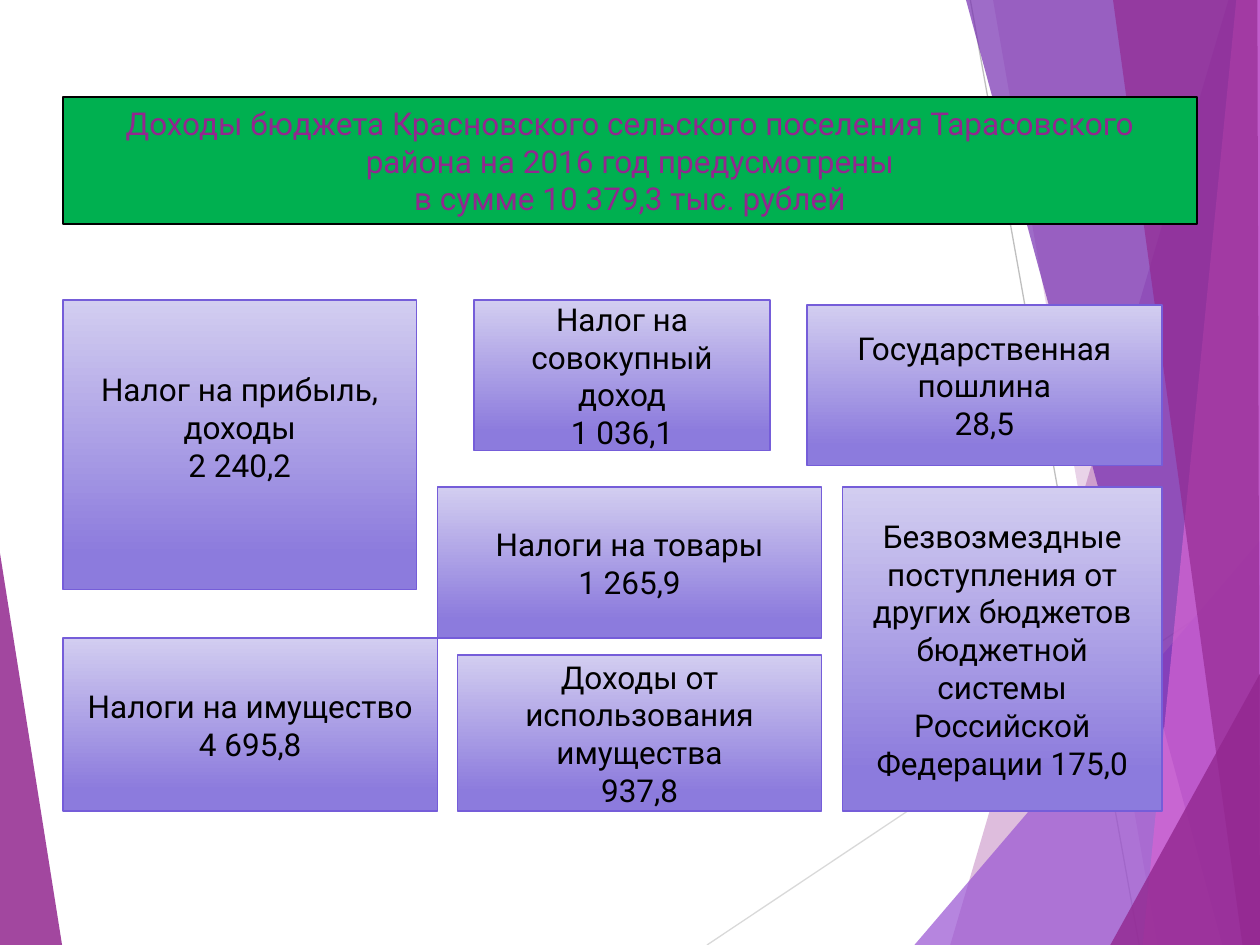
from lxml.etree import SubElement
from pptx import Presentation
from pptx.dml.color import RGBColor
from pptx.enum.shapes import MSO_CONNECTOR, MSO_SHAPE
from pptx.enum.text import MSO_ANCHOR, PP_ALIGN
from pptx.oxml.ns import qn
from pptx.util import Pt

W, H = 720, 540
FONT, SIZE = "Roboto", 18
COLORS = {
    "plum": "92278F", "violet": "9B57D3", "purple": "762EB1", "pink": "D665D3",
    "green": "00B050", "black": "000000", "light": "D2CDF0", "dark": "8C7BDD",
    "border": "755DD9", "gray": "D9D9D9", "midgray": "BFBFBF",
}

# Background: lines (start, end, colour), then shards (points, colour, opacity %)
LINES = [((404, H), (W, 329), "gray"), ((554.5, 0), (651, H), "midgray")]
SHARDS = [
    ([(0, 316), (35.5, H), (0, H)], "plum", 85),
    ([(702, 0), (543, H), (W, H), (W, 0)], "plum", 30),
    ([(567.5, 0), (661.5, H), (W, H), (W, 0)], "plum", 20),
    ([(522.5, H), (W, 309), (W, H)], "violet", 72),
    ([(552, 0), (698.5, H), (W, H), (W, 0)], "purple", 70),
    ([(706.5, 0), (653, H), (W, H), (W, 0)], "pink", 70),
    ([(636, 0), (710, H), (W, H), (718.5, 0)], "plum", 65),
    ([(634.5, H), (W, 385), (W, H)], "plum", 80),
]

TITLE = ("Доходы бюджета Красновского сельского поселения Тарасовского "
         "района на 2016 год предусмотрены\vв сумме 10 379,3 тыс. рублей")
TITLE_BOX = (36, 55.5, 648, 72.5)

# Income boxes: left, top, width, height, paragraphs, bottom inset
INSET = 3.6
BOXES = [
    (36, 171.5, 202, 165.5, ["Налог на прибыль, доходы", "2 240,2"], 24),
    (271, 171.5, 169, 86, ["Налог на совокупный доход", "1 036,1"], INSET),
    (461, 174.5, 203, 91.5, ["Государственная пошлина", "28,5"], INSET),
    (36, 364.5, 214, 99, ["Налоги на имущество", "4 695,8"], INSET),
    (481.5, 278.5, 182.5, 185,
     ["Безвозмездные поступления от других бюджетов бюджетной системы "
      "Российской Федерации 175,0"], INSET),
    (250, 278.5, 219.5, 86, ["Налоги на товары", "1 265,9"], INSET),
    (261.5, 374.5, 208, 89, ["Доходы от использования имущества", "937,8"], INSET),
]


def rgb(name):
    return RGBColor.from_string(COLORS[name])


def add_line(start, end, color):
    s = shapes.add_connector(MSO_CONNECTOR.STRAIGHT, *map(Pt, start + end))
    s.line.color.rgb = rgb(color)
    s.line.width = Pt(0.75)
    SubElement(s._element.spPr, qn("a:effectLst"))


def add_shard(points, color, opacity):
    first, *rest = [(Pt(x), Pt(y)) for x, y in points]
    builder = shapes.build_freeform(*first)
    builder.add_line_segments(rest)
    s = builder.convert_to_shape()
    s.shadow.inherit = False
    s.line.fill.background()
    s.fill.solid()
    s.fill.fore_color.rgb = rgb(color)
    clr = s._element.spPr.find(".//" + qn("a:srgbClr"))
    SubElement(clr, qn("a:alpha"), val=str(opacity * 1000))


def add_box(box, texts, color, border, width, bottom=INSET):
    s = shapes.add_shape(MSO_SHAPE.RECTANGLE, *map(Pt, box))
    s.shadow.inherit = False
    s.line.color.rgb = rgb(border)
    s.line.width = Pt(width)
    tf = s.text_frame
    tf.word_wrap = True
    tf.vertical_anchor = MSO_ANCHOR.MIDDLE
    tf.margin_bottom = Pt(bottom)
    tf.text = "\n".join(texts)
    for p in tf.paragraphs:
        p.alignment = PP_ALIGN.CENTER
        p.font.name, p.font.size = FONT, Pt(SIZE)
        p.font.color.rgb = rgb(color)
    return s


prs = Presentation()
prs.slide_width, prs.slide_height = Pt(W), Pt(H)
shapes = prs.slides.add_slide(prs.slide_layouts[6]).shapes

# Background
add_shard(*SHARDS[0])
for line in LINES:
    add_line(*line)
for shard in SHARDS[1:]:
    add_shard(*shard)

# Title
title = add_box(TITLE_BOX, [TITLE], "plum", "black", 0.75)
title.fill.solid()
title.fill.fore_color.rgb = rgb("green")

# Income boxes, shaded from top to bottom
for *box, texts, bottom in BOXES:
    s = add_box(box, texts, "black", "border", 1, bottom)
    s.fill.gradient()
    s.fill.gradient_angle = 270
    for stop, position, color in zip(s.fill.gradient_stops, (0, 0.88), ("light", "dark")):
        stop.position = position
        stop.color.rgb = rgb(color)

prs.save("out.pptx")
